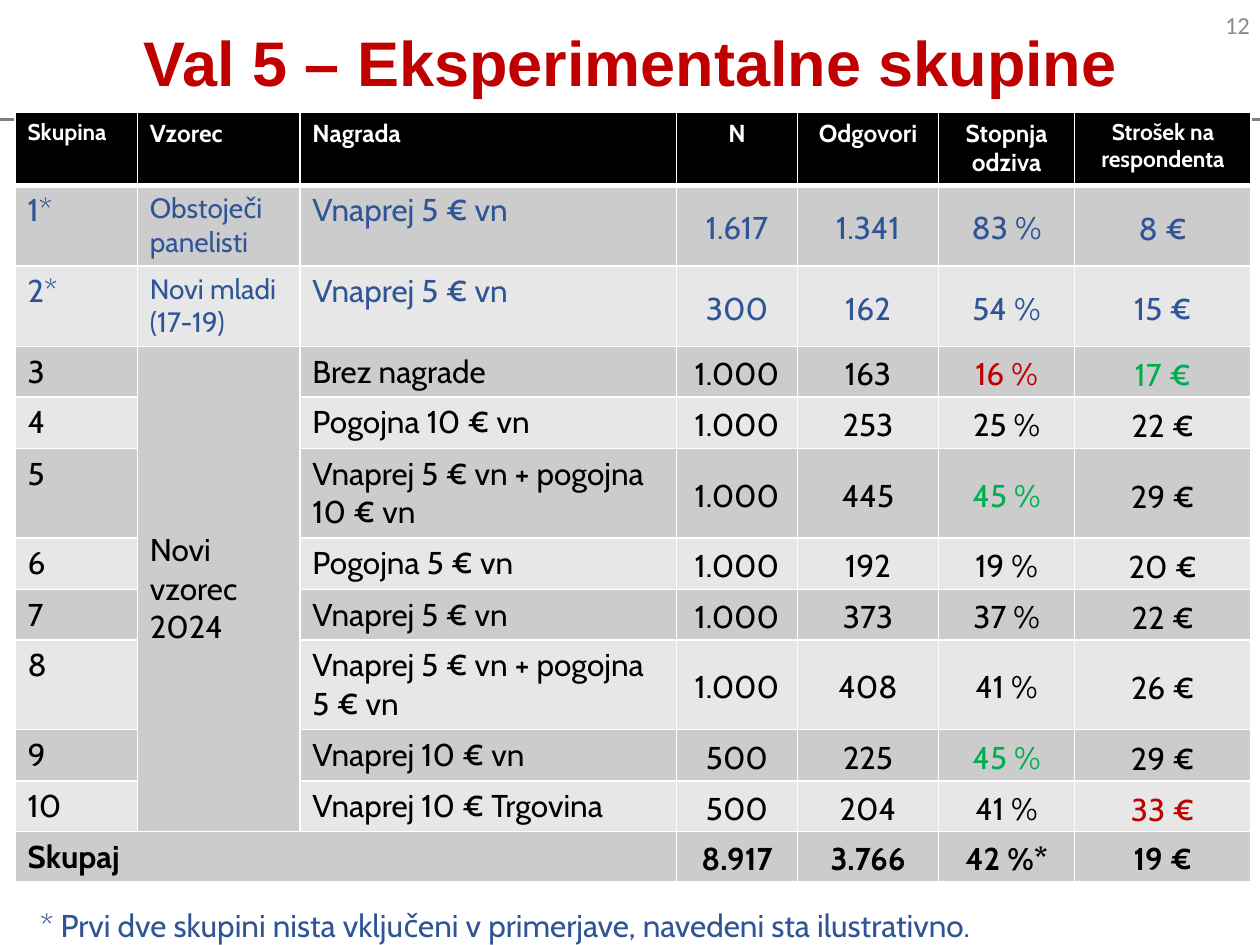
from lxml import etree
from pptx import Presentation
from pptx.dml.color import RGBColor
from pptx.enum.text import MSO_ANCHOR, PP_ALIGN
from pptx.oxml.ns import qn
from pptx.util import Inches, Pt

LEFT, CENTER, RIGHT = PP_ALIGN.LEFT, PP_ALIGN.CENTER, PP_ALIGN.RIGHT
TOP, MIDDLE = MSO_ANCHOR.TOP, MSO_ANCHOR.MIDDLE

WHITE = RGBColor(0xFF, 0xFF, 0xFF)
BLACK = RGBColor(0x00, 0x00, 0x00)
RED = RGBColor(0xC0, 0x00, 0x00)
GREEN = RGBColor(0x00, 0xB0, 0x50)
BLUE = RGBColor(0x2F, 0x55, 0x97)
RULE_GRAY = RGBColor(0x80, 0x80, 0x80)
NUMBER_GRAY = RGBColor(0x8C, 0x8C, 0x8C)
DARK_BAND = RGBColor(0xCC, 0xCC, 0xCC)
LIGHT_BAND = RGBColor(0xE7, 0xE7, 0xE7)

TABLE_FONT = "Cabin"
COLUMN_WIDTHS = [0.97, 1.29, 2.99, 0.96, 1.12, 1.08, 1.4]
ROW_HEIGHTS = [0.58, 0.64, 0.64, 0.4, 0.41, 0.71, 0.41, 0.4, 0.71, 0.41, 0.4, 0.4]
SAMPLE, FIRST_NUMBER, COST = 1, 3, 6
ILLUSTRATIVE_ROWS = (1, 2)
FIRST_NEW, LAST_NEW, TOTAL = 3, 10, 11

HEADERS = ["Skupina", "Vzorec", "Nagrada", "N", "Odgovori", "Stopnja odziva",
           "Strošek na respondenta"]
GROUPS = [
    ["1*", "Obstoječi panelisti", "Vnaprej 5 € vn", "1.617", "1.341", "83 %", "8 €"],
    ["2*", "Novi mladi (17-19)", "Vnaprej 5 € vn", "300", "162", "54 %", "15 €"],
    ["3", "Novi vzorec 2024", "Brez nagrade", "1.000", "163", "16 %", "17 €"],
    ["4", None, "Pogojna 10 € vn", "1.000", "253", "25 %", "22 €"],
    ["5", None, "Vnaprej 5 € vn + pogojna 10 € vn", "1.000", "445", "45 %", "29 €"],
    ["6", None, "Pogojna 5 € vn", "1.000", "192", "19 %", "20 €"],
    ["7", None, "Vnaprej 5 € vn", "1.000", "373", "37 %", "22 €"],
    ["8", None, "Vnaprej 5 € vn + pogojna 5 € vn", "1.000", "408", "41 %", "26 €"],
    ["9", None, "Vnaprej 10 € vn", "500", "225", "45 %", "29 €"],
    ["10", None, "Vnaprej 10 € Trgovina", "500", "204", "41 %", "33 €"],
    ["Skupaj", None, None, "8.917", "3.766", "42 %*", "19 €"],
]
# Best and worst values, by (row, column)
HIGHLIGHTS = {(3, 5): RED, (3, 6): GREEN, (5, 5): GREEN, (9, 5): GREEN, (10, 6): RED}


def write(frame, text, size, font, color, bold=False, align=LEFT, spacing=None):
    paragraph = frame.paragraphs[0]
    paragraph.alignment = align
    if spacing:
        paragraph.line_spacing = spacing
    run = paragraph.add_run()
    run.text = text
    run.font.size = Pt(size)
    run.font.name = font
    run.font.bold = bold
    run.font.color.rgb = color


def set_margins(target, left, top, right, bottom):
    target.margin_left, target.margin_top = Inches(left), Inches(top)
    target.margin_right, target.margin_bottom = Inches(right), Inches(bottom)


def set_borders(cell, top, bottom):
    """White borders: 1 pt at the sides, the given points above and below."""
    properties = cell._tc.get_or_add_tcPr()
    for side, width in (("L", 1), ("R", 1), ("T", top), ("B", bottom)):
        line = etree.SubElement(properties, qn(f"a:ln{side}"), w=str(Pt(width)))
        fill = etree.SubElement(line, qn("a:solidFill"))
        etree.SubElement(fill, qn("a:srgbClr"), val=str(WHITE))


def add_title(slide, text):
    title = slide.shapes.title
    title.left, title.top = Inches(-0.03), Inches(-0.04)
    title.width, title.height = Inches(10.07), Inches(0.99)
    title.line.color.rgb = RULE_GRAY
    title.line.width = Pt(1.5)
    title.text_frame.vertical_anchor = MIDDLE
    write(title.text_frame, text, 36, "Arial", RED, True, CENTER, 1.1)


def add_label(slide, left, top, width, height):
    frame = slide.shapes.add_textbox(
        Inches(left), Inches(top), Inches(width), Inches(height)).text_frame
    frame.word_wrap = True
    return frame


def fill_header(cell, column, text):
    size = 13 if column in (0, COST) else 14
    align = CENTER if column >= FIRST_NUMBER else LEFT
    write(cell.text_frame, text, size, TABLE_FONT, WHITE, True, align)


def fill_body(cell, row, column, text):
    illustrative = row in ILLUSTRATIVE_ROWS
    color = HIGHLIGHTS.get((row, column), BLUE if illustrative else BLACK)
    size = 16 if illustrative and column == SAMPLE else 18
    align, spacing = LEFT, None
    if column >= FIRST_NUMBER:
        align, spacing = CENTER, 1.15
        cell.vertical_anchor = MIDDLE
        if column == COST and row != TOTAL:
            set_margins(cell, 0.01, 0.01, 0.01, 0)
        else:
            set_margins(cell, 0.07, 0, 0.07, 0)
    write(cell.text_frame, text, size, TABLE_FONT, color, row == TOTAL, align, spacing)


def add_group_table(slide):
    table = slide.shapes.add_table(
        len(ROW_HEIGHTS), len(COLUMN_WIDTHS), Inches(0.12), Inches(0.89),
        Inches(sum(COLUMN_WIDTHS)), Inches(sum(ROW_HEIGHTS))).table
    table.first_row = table.horz_banding = False
    for column, width in zip(table.columns, COLUMN_WIDTHS):
        column.width = Inches(width)
    for row, height in zip(table.rows, ROW_HEIGHTS):
        row.height = Inches(height)

    for row, texts in enumerate([HEADERS] + GROUPS):
        band = DARK_BAND if row % 2 else LIGHT_BAND
        for column, text in enumerate(texts):
            cell = table.cell(row, column)
            set_borders(cell, 3 if row == 1 else 1, 3 if row == 0 else 1)
            in_new_sample = column == SAMPLE and FIRST_NEW <= row <= LAST_NEW
            cell.fill.solid()
            cell.fill.fore_color.rgb = (
                BLACK if row == 0 else DARK_BAND if in_new_sample else band)
            cell.vertical_anchor = MIDDLE if in_new_sample else TOP
            if text is None:
                continue
            if row == 0:
                fill_header(cell, column, text)
            else:
                fill_body(cell, row, column, text)

    table.cell(FIRST_NEW, SAMPLE).merge(table.cell(LAST_NEW, SAMPLE))
    table.cell(TOTAL, 0).merge(table.cell(TOTAL, FIRST_NUMBER - 1))


def main():
    presentation = Presentation()
    presentation.slide_width, presentation.slide_height = Inches(10), Inches(7.5)
    slide = presentation.slides.add_slide(presentation.slide_layouts[5])

    add_title(slide, "Val 5 – Eksperimentalne skupine")

    page_number = add_label(slide, 9.53, 0, 0.47, 0.4)
    page_number.vertical_anchor = MIDDLE
    set_margins(page_number, 0.08, 0.08, 0.08, 0.08)
    write(page_number, "12", 14, "Calibri", NUMBER_GRAY, align=RIGHT)

    add_group_table(slide)

    footnote = add_label(slide, 0.22, 6.99, 9.61, 0.49)
    write(footnote,
          "* Prvi dve skupini nista vključeni v primerjave, navedeni sta ilustrativno.",
          18, TABLE_FONT, BLUE, spacing=1.5)

    presentation.save("out.pptx")


if __name__ == "__main__":
    main()
